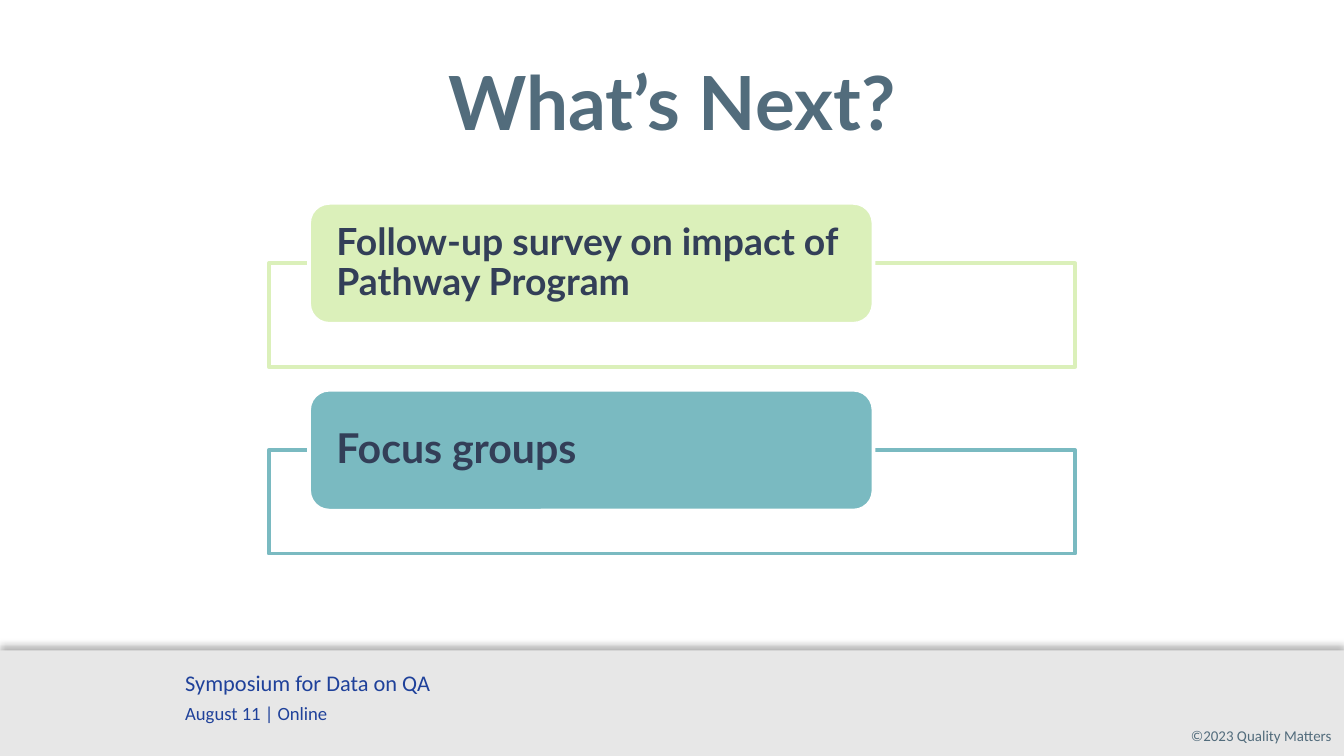
from dataclasses import dataclass

from lxml import etree
from pptx import Presentation
from pptx.dml.color import RGBColor
from pptx.enum import shapes, text
from pptx.oxml import ns
from pptx.util import Inches, Pt


@dataclass(frozen=True)
class Theme:
    heading_font: str = "Lato"
    body_font: str = "Calibri"
    white: str = "FFFFFF"
    slate: str = "526C7C"
    navy: str = "333F58"
    blue: str = "1F419A"
    grey: str = "E7E7E7"
    green: str = "DBF0BA"
    teal: str = "7ABAC1"
    title_size: int = 40
    event_size: int = 12
    date_size: int = 10
    copyright_size: int = 8
    outline: int = 2


THEME = Theme()
SLIDE_W = 10
SLIDE_H = SLIDE_W * 9 / 16


def rgb(value):
    return RGBColor.from_string(value)


def sub(parent, tag, **attributes):
    return etree.SubElement(parent, ns.qn(tag), attributes)


def add_box(slide, kind, box, fill, line=None):
    shape = slide.shapes.add_shape(kind, *map(Inches, box))
    shape.shadow.inherit = False
    shape.fill.solid()
    shape.fill.fore_color.rgb = rgb(fill)
    if line:
        shape.line.color.rgb = rgb(line)
        shape.line.width = Pt(THEME.outline)
    else:
        shape.line.fill.background()
    return shape


def set_font(paragraph, name, size, color, bold=False):
    font = paragraph.font
    font.name, font.size, font.bold = name, Pt(size), bold
    font.color.rgb = rgb(color)


def add_text(slide, box, lines, font, color, align=text.PP_ALIGN.LEFT, bold=False):
    """Add a text box; lines holds (wording, size) pairs."""
    frame = slide.shapes.add_textbox(*map(Inches, box)).text_frame
    frame.word_wrap = True
    for index, (wording, size) in enumerate(lines):
        paragraph = frame.add_paragraph() if index else frame.paragraphs[0]
        paragraph.text = wording
        paragraph.alignment = align
        if index:
            paragraph.space_before = Pt(3)
        set_font(paragraph, font, size, color, bold)
    return frame


def add_footer(slide, left, top, width, height):
    band = add_box(slide, shapes.MSO_SHAPE.RECTANGLE, (left, top, width, height), THEME.grey)
    # Soft shadow cast upwards
    effects = band._element.spPr.find(ns.qn("a:effectLst"))
    shadow = sub(effects, "a:outerShdw", blurRad=str(Pt(4)), dist=str(Pt(3)),
                 dir=str(270 * 60000), algn="b", rotWithShape="0")
    sub(sub(shadow, "a:srgbClr", val="000000"), "a:alpha", val="29000")

    copyright_frame = add_text(
        slide, (left + width - 1.68, top + 0.52, 1.59, 0.24),
        [("©2023 Quality Matters", THEME.copyright_size)],
        THEME.body_font, THEME.slate, text.PP_ALIGN.RIGHT)
    copyright_frame.margin_right = 0
    add_text(slide, (left + 1.28, top + 0.09, 6.39, 0.51),
             [("Symposium for Data on QA", THEME.event_size),
              ("August 11 | Online", THEME.date_size)],
             THEME.body_font, THEME.blue)


def add_title(slide, left, top, width, height):
    frame = add_text(slide, (left, top, width, height), [("What’s Next?", THEME.title_size)],
                     THEME.heading_font, THEME.slate, text.PP_ALIGN.CENTER, bold=True)
    frame.vertical_anchor = text.MSO_ANCHOR.MIDDLE


def add_step(slide, left, top, width, wording, size, color):
    # Outlined frame behind the label
    frame = add_box(slide, shapes.MSO_SHAPE.RECTANGLE,
                    (left, top + 0.45, width, 0.77), THEME.white, color)
    frame_color = frame._element.spPr.find(ns.qn("a:solidFill"))[0]
    sub(frame_color, "a:alpha", val="90000")

    # Rounded label
    label = add_box(slide, shapes.MSO_SHAPE.ROUNDED_RECTANGLE,
                    (left + 0.3, top, width * 0.7, 0.9), color, THEME.white)
    label_frame = label.text_frame
    label_frame.word_wrap = True
    label_frame.vertical_anchor = text.MSO_ANCHOR.MIDDLE
    label_frame.margin_left = label_frame.margin_right = Inches(0.16)
    label_frame.margin_top = label_frame.margin_bottom = 0
    paragraph = label_frame.paragraphs[0]
    paragraph.text = wording
    paragraph.alignment = text.PP_ALIGN.LEFT
    paragraph.line_spacing = 0.9
    set_font(paragraph, THEME.heading_font, size, THEME.navy, bold=True)


def add_steps(slide, left, top, width, pitch):
    steps = [("Follow-up survey on impact of Pathway Program", 20, THEME.green),
             ("Focus groups", 22, THEME.teal)]
    for index, step in enumerate(steps):
        add_step(slide, left, top + index * pitch, width, *step)


def main():
    deck = Presentation()
    deck.slide_width, deck.slide_height = Inches(SLIDE_W), Inches(SLIDE_H)
    slide = deck.slides.add_slide(deck.slide_layouts[6])
    footer_top = 4.84
    add_footer(slide, 0, footer_top, SLIDE_W, SLIDE_H - footer_top)
    add_title(slide, 0, 0.35, SLIDE_W, 0.8)
    add_steps(slide, 2, 1.51, 6, 1.39)
    deck.save("out.pptx")


if __name__ == "__main__":
    main()
